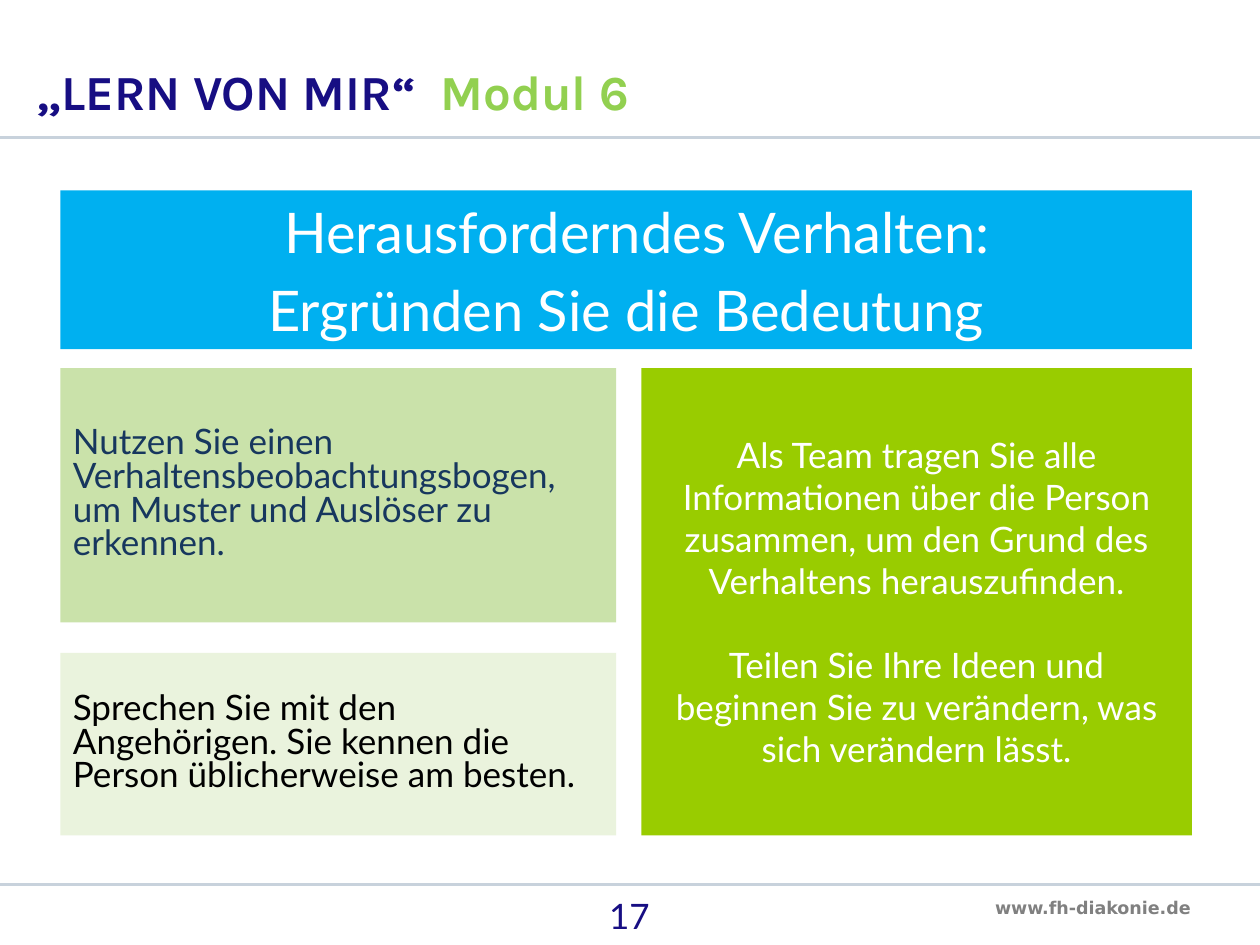
from lxml.etree import SubElement
from pptx import Presentation
from pptx.dml.color import RGBColor
from pptx.enum.shapes import MSO_CONNECTOR, MSO_SHAPE
from pptx.enum.text import MSO_ANCHOR, PP_ALIGN
from pptx.oxml.ns import qn
from pptx.util import Cm, Pt

SLIDE_WIDTH, SLIDE_HEIGHT = 25.4, 19.05
LEFT, RIGHT = 1.22, 24.03
CARD_TOP, CARD_BOTTOM = 7.42, 16.84
LEFT_WIDTH, RIGHT_WIDTH = 11.2, 11.1
NAVY = "170E83"
WHITE = "FFFFFF"


def color(value):
    return RGBColor.from_string(value)


def add_run(paragraph, text, size, value, font="Lato", bold=False):
    run = paragraph.add_run()
    run.text = text
    run.font.size = Pt(size)
    run.font.name = font
    run.font.bold = bold
    run.font.color.rgb = color(value)
    return run


def add_rule(slide, top):
    line = slide.shapes.add_connector(
        MSO_CONNECTOR.STRAIGHT, Cm(0), Cm(top), Cm(SLIDE_WIDTH), Cm(top))
    line.line.color.rgb = color("C8D2DC")
    line.line.width = Pt(1.5)
    SubElement(line._element.spPr, qn("a:effectLst"))


def add_text_box(slide, left, top, width, height, wrap=True):
    frame = slide.shapes.add_textbox(
        Cm(left), Cm(top), Cm(width), Cm(height)).text_frame
    frame.word_wrap = wrap
    return frame


def add_panel(slide, left, top, width, height, fill, texts, size, value,
              align=PP_ALIGN.CENTER, kind=MSO_SHAPE.RECTANGLE):
    shape = slide.shapes.add_shape(kind, Cm(left), Cm(top), Cm(width), Cm(height))
    shape.shadow.inherit = False
    shape.fill.solid()
    shape.fill.fore_color.rgb = color(fill)
    shape.line.fill.background()
    frame = shape.text_frame
    frame.word_wrap = True
    frame.vertical_anchor = MSO_ANCHOR.MIDDLE
    for index, text in enumerate(texts):
        paragraph = frame.add_paragraph() if index else frame.paragraphs[0]
        paragraph.alignment = align
        add_run(paragraph, text, size, value)
    return shape


def add_heading(slide):
    shape = add_panel(
        slide, LEFT, 3.84, RIGHT - LEFT, 3.2, "00B0F0",
        ["Herausforderndes Verhalten:", "Ergründen Sie die Bedeutung"],
        32, WHITE, kind=MSO_SHAPE.ROUNDED_RECTANGLE)
    shape.adjustments[0] = 0
    paragraphs = shape.text_frame.paragraphs
    for paragraph in paragraphs:
        paragraph.space_after = Pt(6)
    paragraphs[0]._p.get_or_add_pPr().set("marL", str(Cm(0.44)))


def add_note(slide, top, height, fill, text, value):
    shape = add_panel(slide, LEFT, top, LEFT_WIDTH, height, fill, [text],
                      20, value, PP_ALIGN.LEFT)
    shape.text_frame.paragraphs[0].line_spacing = 0.8


def add_team_panel(slide):
    shape = add_panel(
        slide, RIGHT - RIGHT_WIDTH, CARD_TOP, RIGHT_WIDTH,
        CARD_BOTTOM - CARD_TOP, "99CC00",
        ["Als Team tragen Sie alle Informationen über die Person zusammen, "
         "um den Grund des Verhaltens herauszufinden.",
         "Teilen Sie Ihre Ideen und beginnen Sie zu verändern, "
         "was sich verändern lässt."],
        20, WHITE)
    shape.text_frame.paragraphs[1].space_before = Pt(24)


def add_title(slide):
    frame = add_text_box(slide, 0.48, 1.09, 16.94, 1.47)
    frame.vertical_anchor = MSO_ANCHOR.BOTTOM
    paragraph = frame.paragraphs[0]
    paragraph.line_spacing = 0.9
    add_run(paragraph, "„LERN VON MIR“", 28, NAVY, "Karla", True)
    gap = add_run(paragraph, " ", 28, NAVY, "Karla", True)
    gap.font._element.set("spc", "700")
    add_run(paragraph, "Modul 6", 28, "92D050", "Karla", True)


def add_footer(slide):
    address = add_text_box(slide, 19.81, 17.96, 4.52, 0.69, wrap=False)
    add_run(address.paragraphs[0], "www.fh-diakonie.de", 10, "808080",
            "DejaVu Sans", True)
    number = add_text_box(slide, 9.73, 17.91, 5.92, 1.14).paragraphs[0]
    number.alignment = PP_ALIGN.CENTER
    add_run(number, "17", 20, NAVY)


def main():
    presentation = Presentation()
    presentation.slide_width = Cm(SLIDE_WIDTH)
    presentation.slide_height = Cm(SLIDE_HEIGHT)
    slide = presentation.slides.add_slide(presentation.slide_layouts[6])
    for top in (2.77, 17.83):
        add_rule(slide, top)
    add_footer(slide)
    add_title(slide)
    add_heading(slide)
    add_note(slide, CARD_TOP, 5.13, "CAE2AA",
             "Nutzen Sie einen Verhaltensbeobachtungsbogen, "
             "um Muster und Auslöser zu erkennen.", "17375E")
    add_note(slide, 13.16, CARD_BOTTOM - 13.16, "EAF3DD",
             "Sprechen Sie mit den Angehörigen. "
             "Sie kennen die Person üblicherweise am besten.", "000000")
    add_team_panel(slide)
    presentation.save("out.pptx")


if __name__ == "__main__":
    main()
